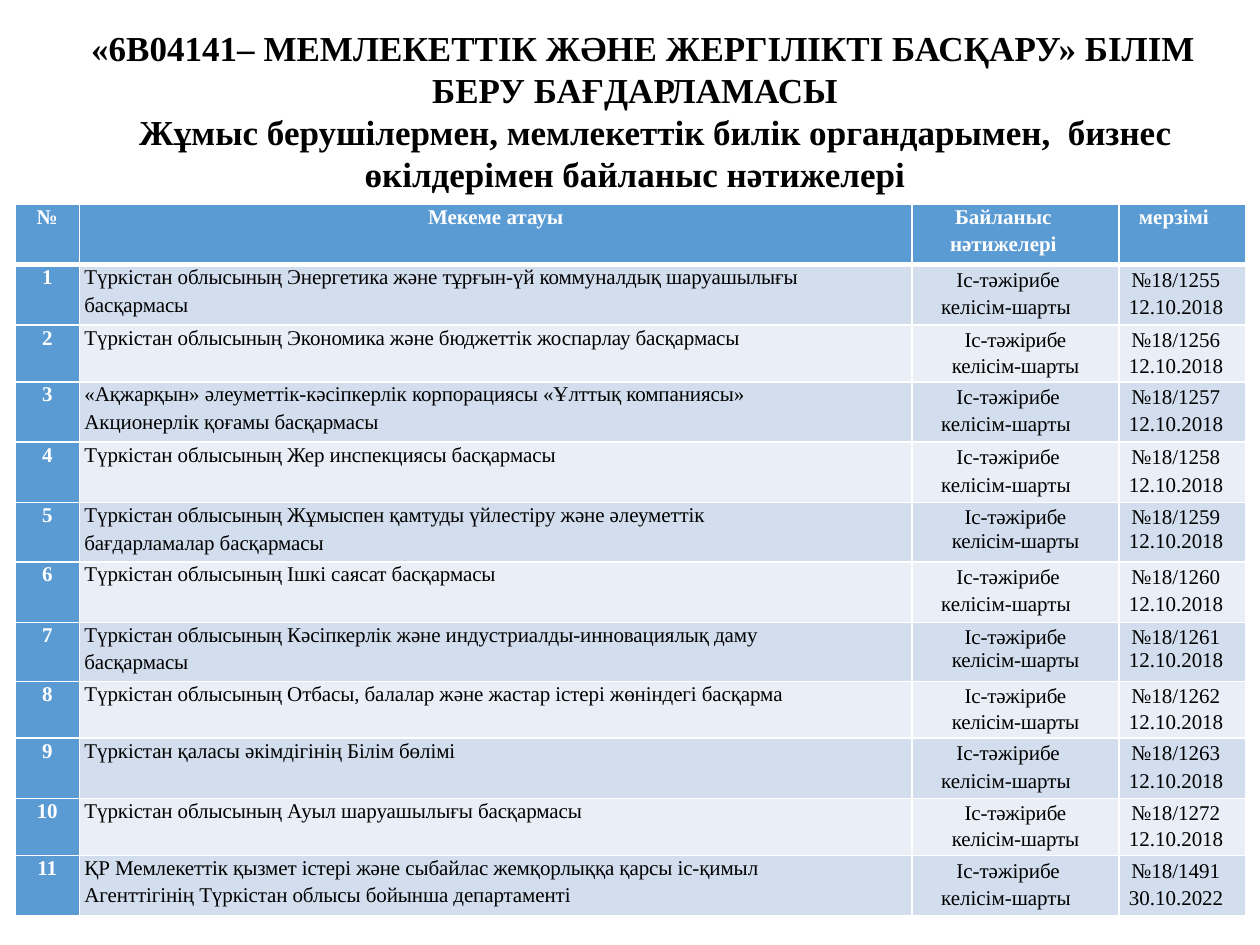
"""Build a slide with a table of partner institutions and their agreements."""
from lxml import etree
from pptx import Presentation
from pptx.dml.color import RGBColor
from pptx.enum.text import PP_ALIGN
from pptx.oxml.ns import qn
from pptx.util import Inches, Pt

CENTER = PP_ALIGN.CENTER
FONT = "Times New Roman"
COLORS = {"head": "5B9BD4", "odd": "D2DEEE", "even": "EAEEF7",
          "white": "FFFFFF", "black": "000000"}
COL_WIDTHS = [0.51, 6.61, 1.64, 1.01]
ROW_HEIGHTS = [0.48, 0.48, 0.45, 0.48, 0.48, 0.47, 0.48, 0.47, 0.45, 0.48, 0.45, 0.48]
TITLE = [
    ("«6В04141– МЕМЛЕКЕТТІК ЖӘНЕ ЖЕРГІЛІКТІ БАСҚАРУ» БІЛІМ БЕРУ БАҒДАРЛАМАСЫ", 0.13),
    ("Жұмыс берушілермен, мемлекеттік билік органдарымен,  бизнес "
     "өкілдерімен байланыс нәтижелері", 0.33),
]
RESULT = ["Іс-тәжірибе", "келісім-шарты"]
DATE = "12.10.2018"
FLOWING, SPLIT, TIGHT = "flowing", "split", "tight"
PARTNERS = [
    (["Түркістан облысының Энергетика және тұрғын-үй коммуналдық шаруашылығы",
      "басқармасы"], "№18/1255", DATE, FLOWING),
    (["Түркістан облысының Экономика және бюджеттік жоспарлау басқармасы"],
     "№18/1256", DATE, SPLIT),
    (["«Ақжарқын» әлеуметтік-кәсіпкерлік корпорациясы «Ұлттық компаниясы»",
      "Акционерлік қоғамы басқармасы"], "№18/1257", DATE, FLOWING),
    (["Түркістан облысының Жер инспекциясы басқармасы"], "№18/1258", DATE, FLOWING),
    (["Түркістан облысының Жұмыспен қамтуды үйлестіру және әлеуметтік",
      "бағдарламалар басқармасы"], "№18/1259", DATE, TIGHT),
    (["Түркістан облысының Ішкі саясат басқармасы"], "№18/1260", DATE, FLOWING),
    (["Түркістан облысының Кәсіпкерлік және индустриалды-инновациялық даму",
      "басқармасы"], "№18/1261", DATE, TIGHT),
    (["Түркістан облысының Отбасы, балалар және жастар істері жөніндегі басқарма"],
     "№18/1262", DATE, SPLIT),
    (["Түркістан қаласы әкімдігінің Білім бөлімі"], "№18/1263", DATE, FLOWING),
    (["Түркістан облысының Ауыл шаруашылығы басқармасы"], "№18/1272", DATE, SPLIT),
    (["ҚР Мемлекеттік қызмет істері және сыбайлас жемқорлыққа қарсы іс-қимыл",
      "Агенттігінің Түркістан облысы бойынша департаменті"],
     "№18/1491", "30.10.2022", FLOWING),
]


def add_line(tf, text, size=12, color="black", bold=False, align=None, left=0,
             first=0, before=0, spacing=None, tracking=0):
    """Write one paragraph, using the frame's empty first paragraph if free."""
    p = tf.paragraphs[0] if not tf.text else tf.add_paragraph()
    r = p.add_run()
    r.text = text
    p.font.name, p.font.size, p.font.bold = FONT, Pt(size), bold
    p.font.color.rgb = RGBColor.from_string(COLORS[color])
    p.alignment = align
    p.space_before = Pt(before)
    p.line_spacing = spacing
    pPr = p._p.get_or_add_pPr()
    pPr.set("marL", str(Inches(left)))
    pPr.set("indent", str(Inches(first)))
    if tracking:
        r._r.get_or_add_rPr().set("spc", str(round(tracking * 100)))


def set_borders(cell, top=1, bottom=1):
    """Give a cell white borders of the given widths in points."""
    tcPr = cell._tc.get_or_add_tcPr()
    for i, (side, width) in enumerate(
            [("lnL", 1), ("lnR", 1), ("lnT", top), ("lnB", bottom)]):
        ln = etree.Element(qn(f"a:{side}"), w=str(Pt(width)))
        fill = etree.SubElement(ln, qn("a:solidFill"))
        etree.SubElement(fill, qn("a:srgbClr"), val=COLORS["white"])
        tcPr.insert(i, ln)


def style_cell(cell, row, col):
    """Set the margins, fill and borders of a cell by its place."""
    cell.margin_left = cell.margin_right = cell.margin_bottom = 0
    cell.margin_top = Inches(0.01 if row == 0 or col < 2 else 0)
    band = "head" if row == 0 or col == 0 else "odd" if row % 2 else "even"
    cell.fill.solid()
    cell.fill.fore_color.rgb = RGBColor.from_string(COLORS[band])
    set_borders(cell, top=3 if row == 1 else 1, bottom=3 if row == 0 else 1)


def fill_header(cells):
    """Write the column headings."""
    head = {"color": "white", "bold": True}
    frames = [cell.text_frame for cell in cells]
    add_line(frames[0], "№", align=CENTER, before=0.6, **head)
    add_line(frames[1], "Мекеме атауы", align=CENTER, before=0.5, **head)
    add_line(frames[2], "Байланыс", left=0.34, before=0.5, **head)
    add_line(frames[2], "нәтижелері", left=0.3, before=2.6, **head)
    add_line(frames[3], "мерзімі", left=0.16, before=0.5, **head)


def fill_partner(cells, number, names, code, date, layout):
    """Write one numbered partner with its agreement and date."""
    index, name, result, term = [cell.text_frame for cell in cells]
    add_line(index, str(number), color="white", bold=True, align=CENTER, before=0.6)
    for i, text in enumerate(names):
        add_line(name, text, left=0.04, before=2.4 if i else 0.6, tracking=-0.05)
    if layout == FLOWING:
        add_line(result, " ".join(RESULT), left=0.23, first=0.12, spacing=Pt(15.6))
        add_line(term, f"{code} {date}", left=0.08, first=0.02, spacing=Pt(15.6))
        return
    spacings = [Pt(15.2), None if layout == TIGHT else Pt(15)]
    for text, spacing in zip(RESULT, spacings):
        add_line(result, text, align=CENTER, spacing=spacing, tracking=-0.1)
    for text, left, spacing in zip([code, date], [0.1, 0.08], spacings):
        add_line(term, text, left=left, spacing=spacing)


def add_title(s):
    """Add the centred two-part title."""
    tf = s.shapes.add_textbox(Inches(0.51), Inches(0.21), Inches(9.06), Inches(1.35)).text_frame
    tf.word_wrap = True
    tf.margin_left = tf.margin_right = tf.margin_top = tf.margin_bottom = 0
    for text, first in TITLE:
        add_line(tf, text, size=20, bold=True, align=CENTER, first=first)


def add_partner_table(s):
    """Add the table of partners."""
    table = s.shapes.add_table(
        len(ROW_HEIGHTS), len(COL_WIDTHS), Inches(0.12), Inches(1.62),
        Inches(sum(COL_WIDTHS)), Inches(sum(ROW_HEIGHTS))).table
    for column, width in zip(table.columns, COL_WIDTHS):
        column.width = Inches(width)
    for i, (row, height) in enumerate(zip(table.rows, ROW_HEIGHTS)):
        row.height = Inches(height)
        for j, cell in enumerate(row.cells):
            style_cell(cell, i, j)
        if i == 0:
            fill_header(row.cells)
        else:
            fill_partner(row.cells, i, *PARTNERS[i - 1])


def main():
    """Build and save the slide."""
    prs = Presentation()
    prs.slide_width, prs.slide_height = Inches(10), Inches(7.5)
    s = prs.slides.add_slide(prs.slide_layouts[6])
    add_title(s)
    add_partner_table(s)
    prs.save("out.pptx")


if __name__ == "__main__":
    main()
